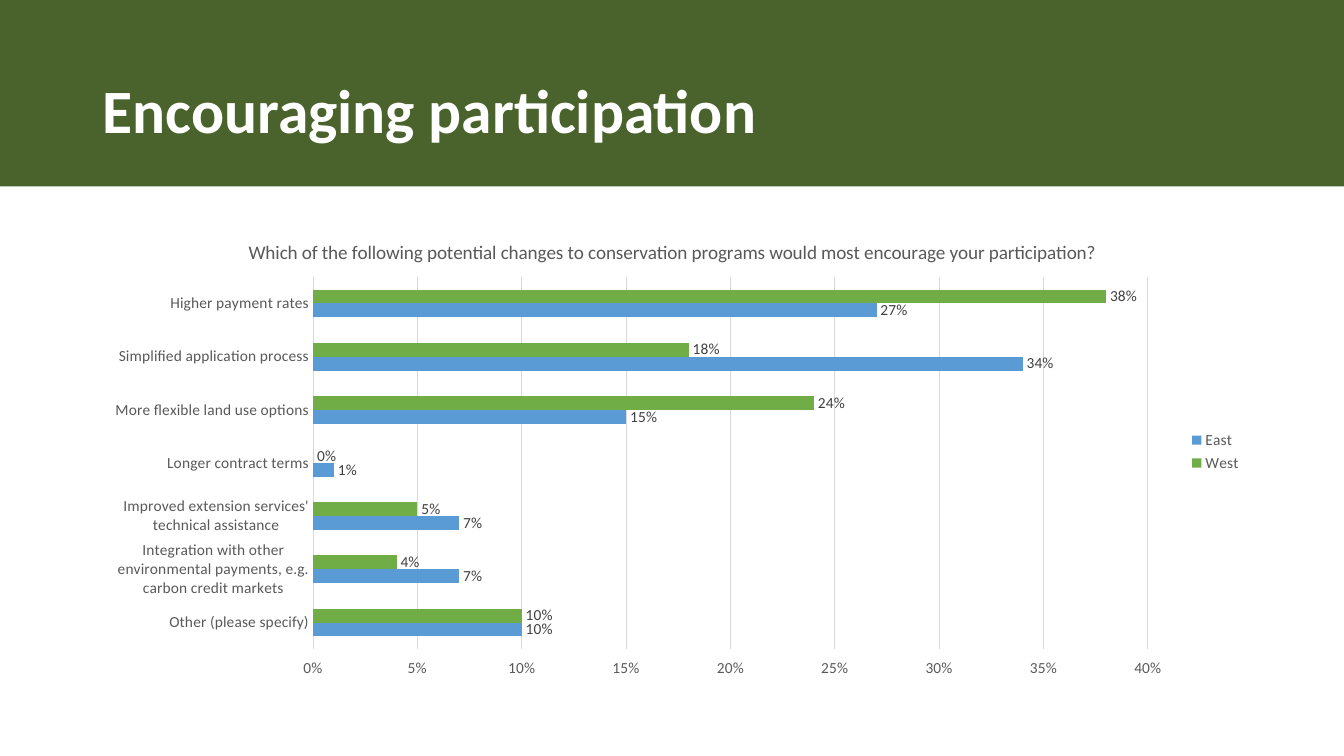
"""Build the slide on encouraging participation, with a clustered bar chart."""
from lxml import etree
from pptx import Presentation
from pptx.chart.data import CategoryChartData
from pptx.dml.color import RGBColor
from pptx.enum.chart import (XL_CHART_TYPE, XL_LABEL_POSITION, XL_LEGEND_POSITION,
                             XL_TICK_LABEL_POSITION, XL_TICK_MARK)
from pptx.enum.shapes import MSO_SHAPE
from pptx.enum.text import MSO_ANCHOR, PP_ALIGN
from pptx.oxml.ns import qn
from pptx.util import Inches, Pt

BAR = XL_CHART_TYPE.BAR_CLUSTERED
NO_TICK = XL_TICK_MARK.NONE
FAR_SIDE = XL_TICK_LABEL_POSITION.HIGH
BAR_END = XL_LABEL_POSITION.OUTSIDE_END
RIGHT = XL_LEGEND_POSITION.RIGHT
RECTANGLE = MSO_SHAPE.RECTANGLE
MIDDLE = MSO_ANCHOR.MIDDLE
LEFT = PP_ALIGN.LEFT
FONT = "Calibri"
GREY, LABEL_GREY, RULE = "595959", "404040", "D9D9D9"

TITLE = "Encouraging participation"
QUESTION = ("Which of the following potential changes to conservation programs "
            "would most encourage your participation?")
CHANGES = [
    "Higher payment rates",
    "Simplified application process",
    "More flexible land use options",
    "Longer contract terms",
    "Improved extension services' technical assistance",
    "Integration with other environmental payments, e.g. carbon credit markets",
    "Other (please specify)",
]
REGIONS = [
    ("West", "70AD47", (0.38, 0.18, 0.24, 0, 0.05, 0.04, 0.1)),
    ("East", "5B9BD5", (0.27, 0.34, 0.15, 0.01, 0.07, 0.07, 0.1)),
]
PLOT = {"x": 0.19, "y": 0.12, "w": 0.72, "h": 0.81}


def rgb(value):
    return RGBColor.from_string(value)


def set_font(font, size, color, bold=False):
    font.name, font.size, font.bold = FONT, Pt(size), bold
    font.color.rgb = rgb(color)


def set_line(line, color):
    line.color.rgb = rgb(color)
    line.width = Pt(0.75)


def place_plot(chart):
    plot_area = chart.element.find(f"{qn('c:chart')}/{qn('c:plotArea')}")
    layout = plot_area.find(qn("c:layout"))
    if layout is None:
        layout = etree.Element(qn("c:layout"))
        plot_area.insert(0, layout)
    manual = etree.SubElement(layout, qn("c:manualLayout"))
    settings = {"layoutTarget": "inner", "xMode": "edge", "yMode": "edge", **PLOT}
    for tag, value in settings.items():
        etree.SubElement(manual, qn(f"c:{tag}")).set("val", str(value))


def add_header(s):
    title = s.shapes.title
    band = s.shapes.add_shape(RECTANGLE, 0, 0, Inches(13.33), Inches(1.85))
    band.shadow.inherit = False
    band.fill.solid()
    band.fill.fore_color.rgb = rgb("4A632C")
    band.line.fill.background()
    title.element.addprevious(band.element)

    title.left, title.top = Inches(0.92), Inches(0.4)
    title.width, title.height = Inches(11.5), Inches(1.45)
    tf = title.text_frame
    tf.text = TITLE
    tf.vertical_anchor = MIDDLE
    p = tf.paragraphs[0]
    p.alignment, p.line_spacing = LEFT, 0.9
    set_font(p.font, 44, "FFFFFF", True)


def add_survey_chart(s):
    data = CategoryChartData(number_format="0%")
    data.categories = CHANGES
    for name, _, values in REGIONS:
        data.add_series(name, values)
    chart = s.shapes.add_chart(BAR, Inches(0.92), Inches(2.2), Inches(11.5),
                               Inches(4.56), data).chart
    set_font(chart.font, 11, "000000")
    chart.has_title = True
    chart.chart_title.include_in_layout = False
    chart.chart_title.text_frame.text = QUESTION
    set_font(chart.chart_title.text_frame.paragraphs[0].font, 13.7, GREY)

    chart.has_legend = True
    chart.legend.position = RIGHT
    chart.legend.include_in_layout = False
    set_font(chart.legend.font, 11, GREY)

    plot = chart.plots[0]
    plot.gap_width, plot.overlap, plot.vary_by_categories = 182, 0, False
    for series, (_, color, _) in zip(plot.series, REGIONS):
        series.format.fill.solid()
        series.format.fill.fore_color.rgb = rgb(color)
        labels = series.data_labels
        labels.show_value = True
        labels.position = BAR_END
        labels.number_format, labels.number_format_is_linked = "0%", False
        set_font(labels.font, 11, LABEL_GREY)

    cat, val = chart.category_axis, chart.value_axis
    for axis in (cat, val):
        axis.major_tick_mark = axis.minor_tick_mark = NO_TICK
        set_font(axis.tick_labels.font, 11, GREY)
    cat.reverse_order = True
    set_line(cat.format.line, RULE)
    val.minimum_scale, val.maximum_scale, val.major_unit = 0, 0.4, 0.05
    val.tick_label_position = FAR_SIDE
    val.tick_labels.number_format = "0%"
    val.tick_labels.number_format_is_linked = False
    val.format.line.fill.background()
    val.has_major_gridlines = True
    set_line(val.major_gridlines.format.line, RULE)
    place_plot(chart)


def main():
    prs = Presentation()
    prs.slide_width, prs.slide_height = Inches(13.33), Inches(7.5)
    s = prs.slides.add_slide(prs.slide_layouts[5])
    add_header(s)
    add_survey_chart(s)
    prs.save("out.pptx")


if __name__ == "__main__":
    main()
